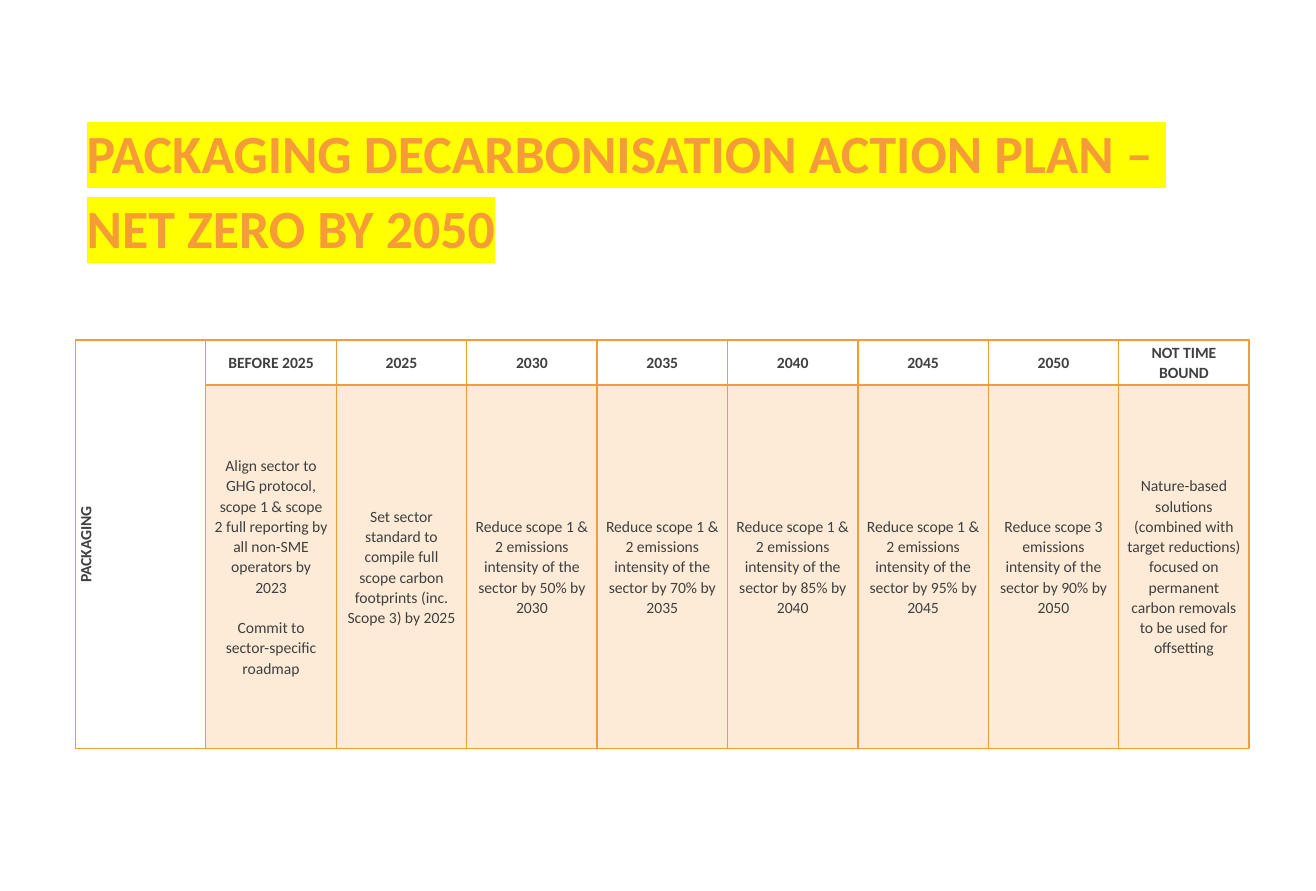
from pptx import Presentation
from pptx.dml.color import RGBColor
from pptx.enum.text import MSO_ANCHOR, MSO_AUTO_SIZE, PP_ALIGN
from pptx.oxml.ns import qn
from pptx.util import Inches, Mm, Pt
from lxml import etree

TOP, MIDDLE = MSO_ANCHOR.TOP, MSO_ANCHOR.MIDDLE
LEFT, CENTER = PP_ALIGN.LEFT, PP_ALIGN.CENTER
NO_AUTOFIT = MSO_AUTO_SIZE.NONE

SLIDE_WIDTH, SLIDE_HEIGHT = Mm(297), Mm(201)
MARGIN = 0.67
TABLE_WIDTH = 10.43
ROW_HEIGHTS = (0.4, 3.23)
CELL_MARGIN = Pt(5.4)
ORANGE, GREY, YELLOW = "F59C38", "404040", "FFFF00"
FONT = "Calibri"
LAYOUT_TITLE_ONLY = 5

TITLE_LINES = ("PACKAGING DECARBONISATION ACTION PLAN – ", "NET ZERO BY 2050")
SECTOR = "PACKAGING"
REDUCTION = "Reduce scope {} emissions intensity of the sector by {}% by {}"
TARGETS = (("1 & 2", 50, 2030), ("1 & 2", 70, 2035), ("1 & 2", 85, 2040),
           ("1 & 2", 95, 2045), ("3", 90, 2050))
ACTIONS = [
    ("BEFORE 2025", ("Align sector to GHG protocol, scope 1 & scope 2 full "
                     "reporting by all non-SME operators by 2023",
                     "Commit to sector-specific roadmap")),
    ("2025", ("Set sector standard to compile full scope carbon footprints "
              "(inc. Scope 3) by 2025",)),
    *((str(target[2]), (REDUCTION.format(*target),)) for target in TARGETS),
    ("NOT TIME BOUND", ("Nature-based solutions (combined with target "
                        "reductions) focused on permanent carbon removals "
                        "to be used for offsetting",)),
]


def rgb(value):
    return RGBColor.from_string(value)


def apply(target, formats):
    for name, value in formats.items():
        setattr(target, name, value)


def add_color(parent, tag, color):
    holder = etree.SubElement(parent, qn(tag))
    etree.SubElement(holder, qn("a:srgbClr"), val=color)


def write_lines(frame, lines, paragraph_format, gap, size, bold, color,
                highlight=None):
    """Write one paragraph per line, with the gap only between paragraphs."""
    for index, line in enumerate(lines):
        paragraph = frame.paragraphs[0] if index == 0 else frame.add_paragraph()
        apply(paragraph, paragraph_format)
        paragraph.space_before = Pt(gap if index else 0)
        run = paragraph.add_run()
        run.text = line
        run.font.color.rgb = rgb(color)
        if highlight:
            add_color(run.font._element, "a:highlight", highlight)
        apply(run.font, {"name": FONT, "size": Pt(size), "bold": bold})


def add_title(slide, left, top, width, height):
    title = slide.shapes.title
    apply(title, {"left": Inches(left), "top": Inches(top),
                  "width": Inches(width), "height": Inches(height)})
    apply(title.text_frame, {"word_wrap": True, "auto_size": NO_AUTOFIT,
                             "vertical_anchor": TOP})
    write_lines(title.text_frame, TITLE_LINES,
                {"alignment": LEFT, "line_spacing": 0.9},
                10.6, 34.4, True, ORANGE, YELLOW)


def set_borders(cell, bottom_width):
    properties = cell._tc.get_or_add_tcPr()
    widths = (("a:lnL", 1), ("a:lnR", 1), ("a:lnT", 1), ("a:lnB", bottom_width))
    for index, (tag, width) in enumerate(widths):
        line = etree.Element(qn(tag), w=str(Pt(width)))
        add_color(line, "a:solidFill", ORANGE)
        properties.insert(index, line)


def fill_cell(cell, lines, bold, tinted=False, bottom_width=1):
    apply(cell, {"vertical_anchor": MIDDLE,
                 "margin_left": CELL_MARGIN, "margin_right": CELL_MARGIN,
                 "margin_top": 0, "margin_bottom": 0})
    write_lines(cell.text_frame, lines,
                {"alignment": CENTER, "line_spacing": 1.07},
                13, 10, bold, GREY)
    if tinted:
        cell.fill.solid()
        cell.fill.fore_color.rgb = rgb(ORANGE)
        color = cell._tc.tcPr.find(".//" + qn("a:srgbClr"))
        etree.SubElement(color, qn("a:alpha"), val="20000")
    else:
        cell.fill.background()
    set_borders(cell, bottom_width)


def add_action_table(slide, left, top, width):
    column_count = len(ACTIONS) + 1
    frame = slide.shapes.add_table(
        len(ROW_HEIGHTS), column_count, Inches(left), Inches(top),
        Inches(width), Inches(sum(ROW_HEIGHTS)))
    table = frame.table
    apply(table, {"first_row": False, "horz_banding": False})
    for row, height in zip(table.rows, ROW_HEIGHTS):
        row.height = Inches(height)

    sector_cell, lower_cell = table.cell(0, 0), table.cell(1, 0)
    sector_cell.merge(lower_cell)
    fill_cell(sector_cell, (SECTOR,), True)
    sector_cell._tc.tcPr.set("vert", "vert270")
    lower_cell.fill.background()
    set_borders(lower_cell, 1)

    for column, (period, actions) in enumerate(ACTIONS, start=1):
        fill_cell(table.cell(0, column), (period,), True, bottom_width=2)
        fill_cell(table.cell(1, column), actions, False, tinted=True)


def main():
    presentation = Presentation()
    presentation.slide_width = SLIDE_WIDTH
    presentation.slide_height = SLIDE_HEIGHT
    layout = presentation.slide_layouts[LAYOUT_TITLE_ONLY]
    slide = presentation.slides.add_slide(layout)
    add_title(slide, MARGIN, 1.08, 10.63, 0.58)
    add_action_table(slide, MARGIN, 3.02, TABLE_WIDTH)
    presentation.save("out.pptx")


if __name__ == "__main__":
    main()
